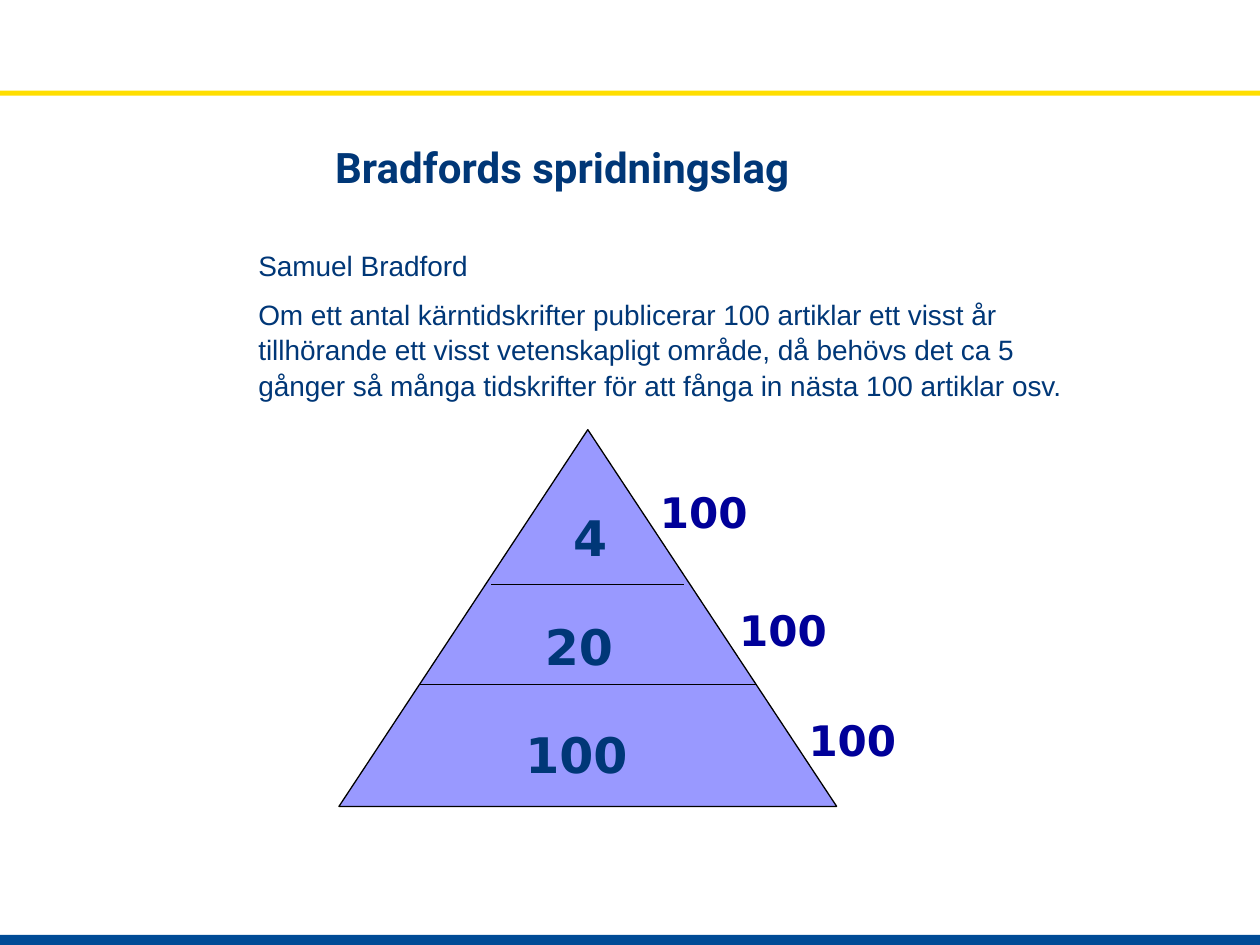
from dataclasses import dataclass

import pptx
import pptx.dml.color
import pptx.enum.shapes
import pptx.enum.text
import pptx.oxml.ns
import pptx.util
from lxml import etree

Inches = pptx.util.Inches
Pt = pptx.util.Pt
Shape = pptx.enum.shapes.MSO_SHAPE
Align = pptx.enum.text.PP_ALIGN


@dataclass(frozen=True)
class Theme:
    navy: str = "003777"
    band_blue: str = "004B96"
    yellow: str = "FFDE00"
    lilac: str = "9999FF"
    label_blue: str = "000099"
    black: str = "000000"
    title_font: str = "Roboto"
    body_font: str = "Arial"
    number_font: str = "DejaVu Sans"
    title_size: int = 24
    body_size: int = 16
    label_size: int = 24
    level_size: int = 28
    line_width: float = 0.75


def rgb(value):
    return pptx.dml.color.RGBColor.from_string(value)


class SlideBuilder:
    def __init__(self, page, theme):
        self.page = page
        self.theme = theme

    def place(self, box, left, top, width, height):
        box.left, box.top = Inches(left), Inches(top)
        box.width, box.height = Inches(width), Inches(height)

    def frame(self, box, wrap=True):
        frame = box.text_frame
        frame.word_wrap = wrap
        frame.auto_size = pptx.enum.text.MSO_AUTO_SIZE.NONE
        frame.vertical_anchor = pptx.enum.text.MSO_ANCHOR.TOP
        return frame

    def span(self, para, text, font, size, color, bold=False):
        span = para.add_run()
        span.text = text
        span.font.name = font
        span.font.size = Pt(size)
        span.font.bold = bold
        span.font.color.rgb = rgb(color)

    def shape(self, kind, bounds, fill, outline=None):
        shape = self.page.shapes.add_shape(kind, *map(Inches, bounds))
        shape.shadow.inherit = False
        shape.fill.solid()
        shape.fill.fore_color.rgb = rgb(fill)
        if outline:
            shape.line.color.rgb = rgb(outline)
            shape.line.width = Pt(self.theme.line_width)
        else:
            shape.line.fill.background()

    def divider(self, left, right, height):
        line = self.page.shapes.add_connector(
            pptx.enum.shapes.MSO_CONNECTOR.STRAIGHT,
            Inches(left), Inches(height), Inches(right), Inches(height))
        line.line.color.rgb = rgb(self.theme.black)
        line.line.width = Pt(self.theme.line_width)
        properties = line._element.spPr
        etree.SubElement(properties, pptx.oxml.ns.qn("a:effectLst"))

    def title(self, text, bounds):
        box = self.page.shapes.title
        self.place(box, *bounds)
        para = self.frame(box).paragraphs[0]
        para.alignment = Align.LEFT
        self.span(para, text, self.theme.title_font, self.theme.title_size,
                  self.theme.navy, bold=True)

    def body(self, texts, bounds):
        box = self.page.placeholders[1]
        self.place(box, *bounds)
        frame = self.frame(box)
        for index, text in enumerate(texts):
            para = frame.add_paragraph() if index else frame.paragraphs[0]
            properties = para._p.get_or_add_pPr()
            properties.set("marL", "0")
            properties.set("indent", "0")
            etree.SubElement(properties, pptx.oxml.ns.qn("a:buNone"))
            para.line_spacing = 1.05
            para.space_before = Pt(self.theme.body_size / 2 if index else 0)
            self.span(para, text, self.theme.body_font, self.theme.body_size,
                      self.theme.navy)

    def number(self, text, bounds, size, color, wrap=False):
        box = self.page.shapes.add_textbox(*map(Inches, bounds))
        para = self.frame(box, wrap).paragraphs[0]
        para.alignment = Align.CENTER
        self.span(para, text, self.theme.number_font, size, color, bold=True)


def main():
    deck = pptx.Presentation()
    deck.slide_width, deck.slide_height = Inches(10), Inches(7.5)
    theme = Theme()
    builder = SlideBuilder(deck.slides.add_slide(deck.slide_layouts[1]), theme)

    builder.shape(Shape.RECTANGLE, (0, 7.42, 10, 0.08), theme.band_blue)
    builder.shape(Shape.RECTANGLE, (0, 0.72, 10, 0.04), theme.yellow)
    builder.title("Bradfords spridningslag", (2.56, 1.07, 6.04, 0.5))
    builder.body([
        "Samuel Bradford",
        "Om ett antal kärntidskrifter publicerar 100 artiklar ett visst år "
        "tillhörande ett visst vetenskapligt område, då behövs det ca 5 "
        "gånger så många tidskrifter för att fånga in nästa 100 artiklar osv.",
    ], (1.95, 1.91, 6.88, 1.31))

    builder.shape(Shape.FLOWCHART_EXTRACT, (2.69, 3.41, 3.95, 2.99),
                  theme.lilac, theme.black)
    builder.divider(3.9, 5.43, 4.64)
    builder.divider(3.33, 6.01, 5.43)

    for left, top in ((5.13, 3.81), (5.76, 4.75), (6.31, 5.62)):
        builder.number("100", (left, top, 0.91, 0.5),
                       theme.label_size, theme.label_blue)

    levels = (("4", 4.45, 0.28), ("20", 4.22, 0.75), ("100", 4.06, 1.03))
    for index, (journals, left, width) in enumerate(levels):
        builder.number(journals, (left, 3.98 + index * 0.86, width, 0.57),
                       theme.level_size, theme.navy, wrap=len(journals) == 1)

    deck.save("out.pptx")


if __name__ == "__main__":
    main()
